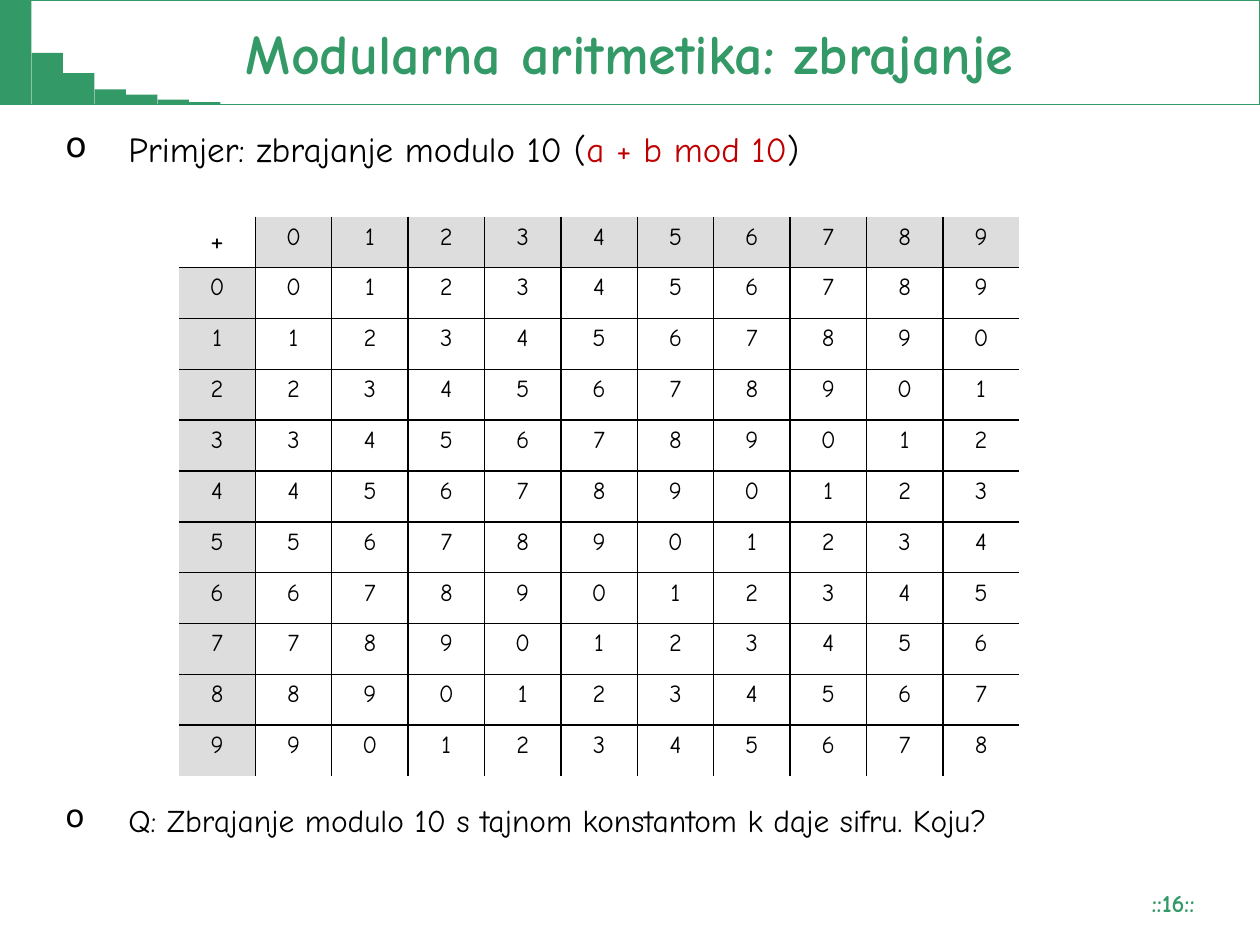
"""Build the slide on modular addition with its modulo 10 table."""
from lxml import etree
from pptx import Presentation
from pptx.dml.color import RGBColor
from pptx.enum.shapes import MSO_SHAPE
from pptx.enum.text import MSO_ANCHOR, PP_ALIGN
from pptx.oxml.ns import qn
from pptx.util import Inches, Pt

RECT = MSO_SHAPE.RECTANGLE
MIDDLE = MSO_ANCHOR.MIDDLE
CENTER, RIGHT = PP_ALIGN.CENTER, PP_ALIGN.RIGHT
GREEN = RGBColor(0x33, 0x99, 0x66)
BLACK = RGBColor(0x00, 0x00, 0x00)
RED = RGBColor(0xC0, 0x00, 0x00)
GRAY = RGBColor(0xDD, 0xDD, 0xDD)
FONT = "Comic Neue"
N = 10


def add_run(p, text, size, color, bold=False):
    r = p.add_run()
    r.text = text
    for name, value in {"name": FONT, "size": Pt(size), "bold": bold}.items():
        setattr(r.font, name, value)
    r.font.color.rgb = color


def add_border(cell, side, visible):
    ln = etree.SubElement(cell._tc.get_or_add_tcPr(), qn(f"a:ln{side}"), w=str(Pt(1)))
    if visible:
        fill = etree.SubElement(ln, qn("a:solidFill"))
        etree.SubElement(fill, qn("a:srgbClr"), val=str(BLACK))
    else:
        etree.SubElement(ln, qn("a:noFill"))


prs = Presentation()
prs.slide_width, prs.slide_height = Inches(10), Inches(7.5)
s = prs.slides.add_slide(prs.slide_layouts[6])

for i, top in enumerate([0, 0.42, 0.58, 0.71, 0.75, 0.79, 0.81]):
    sp = s.shapes.add_shape(RECT, Inches(0.25 * i), Inches(top), Inches(0.25), Inches(0.83 - top))
    sp.shadow.inherit = False
    sp.fill.solid()
    sp.fill.fore_color.rgb = GREEN
    sp.line.fill.background()

sp = s.shapes.add_textbox(Inches(8.5), Inches(7), Inches(1.08), Inches(0.33))
sp.text_frame.word_wrap = True
p = sp.text_frame.paragraphs[0]
p.alignment = RIGHT
add_run(p, "::16::", 14, GREEN, True)

sp = s.shapes.add_shape(RECT, 0, 0, Inches(10), Inches(0.83))
sp.shadow.inherit = False
sp.fill.background()
sp.line.color.rgb = GREEN
sp.line.width = Pt(1)
tf = sp.text_frame
tf.vertical_anchor = MIDDLE
p = tf.paragraphs[0]
p.alignment = CENTER
add_run(p, "Modularna aritmetika: zbrajanje", 32, GREEN, True)

bullets = [
    (20, 4, [("Primjer: zbrajanje modulo 10 (", BLACK), ("a + b mod 10", RED), (")", BLACK)]),
    (18, 363, [("Q: Zbrajanje modulo 10 s tajnom konstantom k daje sifru. Koju?", BLACK)]),
]
sp = s.shapes.add_textbox(Inches(0.42), Inches(1), Inches(9.42), Inches(6.17))
tf = sp.text_frame
tf.word_wrap = True
for i, (size, before, runs) in enumerate(bullets):
    p = tf.add_paragraph() if i else tf.paragraphs[0]
    for name, value in {"line_spacing": 0.9, "space_before": Pt(before)}.items():
        setattr(p, name, value)
    pPr = p._p.get_or_add_pPr()
    pPr.set("marL", str(Inches(0.5)))
    pPr.set("indent", str(-Inches(0.5)))
    color = etree.SubElement(pPr, qn("a:buClr"))
    etree.SubElement(color, qn("a:srgbClr"), val=str(BLACK))
    etree.SubElement(pPr, qn("a:buChar"), char="o")
    for text, rgb in runs:
        add_run(p, text, size, rgb)

frame = s.shapes.add_table(N + 1, N + 1, Inches(1.42), Inches(1.72), Inches(6.67), Inches(4.44))
table = frame.table
table.first_row = table.horz_banding = False
for col in table.columns:
    col.width = Inches(6.67 / (N + 1))
for row in table.rows:
    row.height = Inches(4.44 / (N + 1))

for i in range(N + 1):
    for j in range(N + 1):
        cell = table.cell(i, j)
        for side, visible in {"L": j > 0, "R": j < N, "T": i > 0, "B": i < N}.items():
            add_border(cell, side, visible)
        corner = i == j == 0
        if (i == 0 or j == 0) and not corner:
            cell.fill.solid()
            cell.fill.fore_color.rgb = GRAY
        else:
            cell.fill.background()
        a, b = max(i - 1, 0), max(j - 1, 0)
        p = cell.text_frame.paragraphs[0]
        p.alignment = CENTER
        p.space_before = Pt(3)
        add_run(p, "+" if corner else str((a + b) % N), 18 if corner else 14, BLACK)

prs.save("out.pptx")
